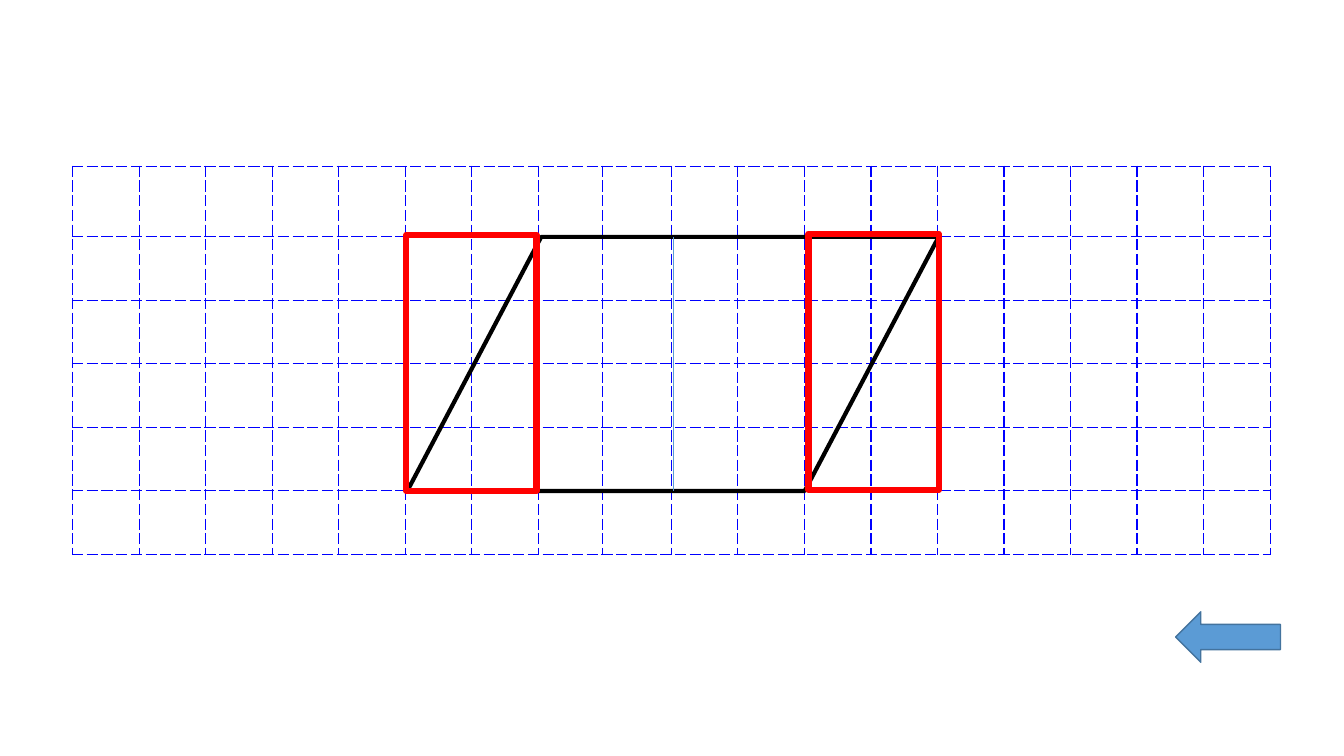
from lxml import etree
from pptx import Presentation
from pptx import util as u
from pptx.dml.color import RGBColor
from pptx.enum import shapes as kinds
from pptx.oxml.ns import qn

SHAPE = kinds.MSO_SHAPE


def color(hex_value):
    return RGBColor.from_string(hex_value)


def add_border(cell, side, hex_value, points):
    line = etree.SubElement(cell._tc.get_or_add_tcPr(), qn(f"a:ln{side}"), w=str(u.Pt(points)))
    fill = etree.SubElement(line, qn("a:solidFill"))
    etree.SubElement(fill, qn("a:srgbClr"), val=hex_value)
    etree.SubElement(line, qn("a:prstDash"), val="lgDash")


def add_outline(slide, kind, box, line, points, fill=None):
    outline = slide.shapes.add_shape(kind, *map(u.Inches, box))
    outline.shadow.inherit = False
    outline.line.color.rgb = color(line)
    outline.line.width = u.Pt(points)
    if fill:
        outline.fill.solid()
        outline.fill.fore_color.rgb = color(fill)
    else:
        outline.fill.background()
    return outline


def draw_grid(slide, box):
    widths = [0.66] * 7 + [0.64, 0.68] + [0.66] * 9
    heights = [0.7] + [0.63] * 5
    grid = slide.shapes.add_table(len(heights), len(widths), *map(u.Inches, box)).table
    grid.first_row = grid.horz_banding = False
    for column, width in zip(grid.columns, widths):
        column.width = u.Inches(width)
    for row, height in zip(grid.rows, heights):
        row.height = u.Inches(height)
    for cell in grid.iter_cells():
        for side in "LRTB":
            add_border(cell, side, "0000FF", 1)
        cell.fill.background()


def draw_parallelogram(slide, box):
    left, top, width, height = box
    parallelogram = add_outline(slide, SHAPE.PARALLELOGRAM, box, "000000", 3)
    parallelogram.adjustments[0] = 0.527

    middle = left + width / 2
    divider = slide.shapes.add_connector(
        kinds.MSO_CONNECTOR.STRAIGHT,
        *map(u.Inches, (middle, top, middle, top + height)))
    divider.line.color.rgb = color("5B9BD5")
    divider.line.width = u.Pt(0.5)
    etree.SubElement(divider._element.spPr, qn("a:effectLst"))

    end_width = 1.29
    for end_left, end_top in ((left - 0.01, top - 0.02),
                              (left + width - end_width, top - 0.03)):
        add_outline(slide, SHAPE.RECTANGLE, (end_left, end_top, end_width, 2.54), "FF0000", 4.5)


def draw_back_arrow(slide, box):
    add_outline(slide, SHAPE.LEFT_ARROW, box, "43739E", 1, fill="5B9BD5")


def main():
    deck = Presentation()
    deck.slide_width, deck.slide_height = u.Inches(13.33), u.Inches(7.5)
    slide = deck.slides.add_slide(deck.slide_layouts[6])
    draw_grid(slide, (0.72, 1.65, 11.89, 3.84))
    draw_parallelogram(slide, (4.04, 2.35, 5.27, 2.52))
    draw_back_arrow(slide, (11.66, 6.07, 1.04, 0.5))
    deck.save("out.pptx")


if __name__ == "__main__":
    main()
